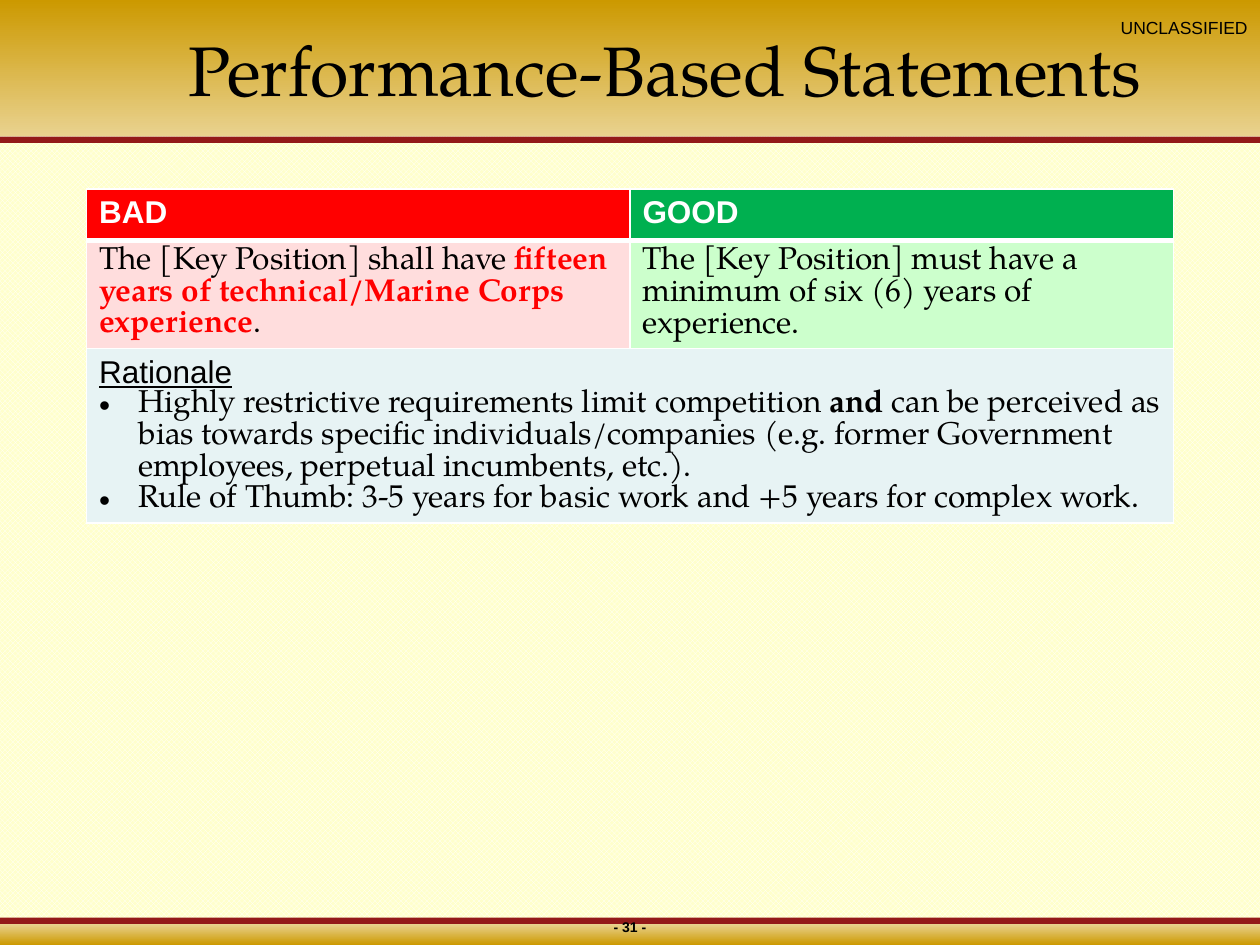
from lxml import etree
from pptx import Presentation
from pptx.dml.color import RGBColor
from pptx.enum.dml import MSO_PATTERN
from pptx.enum.shapes import MSO_SHAPE
from pptx.enum.text import MSO_ANCHOR, PP_ALIGN
from pptx.oxml.ns import qn
from pptx.util import Pt

RECT = MSO_SHAPE.RECTANGLE
TRELLIS = MSO_PATTERN.TRELLIS
TOP, MIDDLE = MSO_ANCHOR.TOP, MSO_ANCHOR.MIDDLE
LEFT, CENTER, RIGHT = PP_ALIGN.LEFT, PP_ALIGN.CENTER, PP_ALIGN.RIGHT

BLACK = RGBColor(0x00, 0x00, 0x00)
WHITE = RGBColor(0xFF, 0xFF, 0xFF)
CREAM = RGBColor(0xFF, 0xFF, 0xCC)
GOLD = RGBColor(0xCC, 0x99, 0x00)
SAND = RGBColor(0xE9, 0xD2, 0x8F)
MAROON = RGBColor(0x93, 0x19, 0x19)
RED = RGBColor(0xFF, 0x00, 0x00)
GREEN = RGBColor(0x00, 0xB0, 0x50)
PINK = RGBColor(0xFF, 0xDD, 0xDD)
MINT = RGBColor(0xCC, 0xFF, 0xCC)
ICE = RGBColor(0xE7, 0xF3, 0xF4)

SANS, SERIF = "Arial", "TeX Gyre Pagella"
WIDE, HIGH = 720, 540
INDENT = 22.5
PLAIN = {"name": SERIF, "size": Pt(18), "bold": False}
STRONG = {**PLAIN, "bold": True}
HEAD = {**STRONG, "name": SANS}
UNDER = {**PLAIN, "name": SANS, "underline": True}


def add_run(para, text, form, color=BLACK):
    """Add one run with its format values and colour."""
    run = para.add_run()
    run.text = text
    for key, value in form.items():
        setattr(run.font, key, value)
    run.font.color.rgb = color


def add_band(slide, box, colors):
    """Draw a borderless bar, plain or with a downward gradient."""
    bar = slide.shapes.add_shape(RECT, *map(Pt, box))
    bar.shadow.inherit = False
    bar.line.fill.background()
    if len(colors) == 1:
        bar.fill.solid()
        bar.fill.fore_color.rgb = colors[0]
        return
    bar.fill.gradient()
    bar.fill.gradient_angle = 270
    for stop, color in zip(bar.fill.gradient_stops, colors):
        stop.color.rgb = color


def add_label(slide, box, text, form, align):
    """Place a one-line label in its box."""
    frame = slide.shapes.add_textbox(*map(Pt, box)).text_frame
    values = {"word_wrap": True, "vertical_anchor": TOP,
              "margin_top": 0, "margin_bottom": 0}
    for key, value in values.items():
        setattr(frame, key, value)
    para = frame.paragraphs[0]
    para.alignment = align
    add_run(para, text, {"name": SANS, **form})


def set_title(slide, box, text):
    """Move the title to the front and format it."""
    title = slide.shapes.title
    slide.shapes._spTree.append(title._element)
    for key, value in zip(("left", "top", "width", "height"), box):
        setattr(title, key, Pt(value))
    frame = title.text_frame
    frame.word_wrap = True
    frame.vertical_anchor = MIDDLE
    para = frame.paragraphs[0]
    para.alignment = CENTER
    add_run(para, text, {"name": SERIF, "size": Pt(40)})


def set_edges(cell, top, bottom):
    """Draw white borders round a cell."""
    props = cell._tc.get_or_add_tcPr()
    for spot, (side, width) in enumerate(
            (("lnL", 1), ("lnR", 1), ("lnT", top), ("lnB", bottom))):
        line = etree.Element(qn(f"a:{side}"), w=str(Pt(width)))
        fill = etree.SubElement(line, qn("a:solidFill"))
        etree.SubElement(fill, qn("a:srgbClr"), val=str(WHITE))
        props.insert(spot, line)


def add_bullet(para):
    """Give a paragraph a hanging round bullet."""
    props = para._p.get_or_add_pPr()
    props.set("marL", str(Pt(INDENT)))
    props.set("indent", str(-Pt(INDENT)))
    etree.SubElement(props, qn("a:buFont"), typeface=SANS)
    etree.SubElement(props, qn("a:buChar"), char="•")


def fill_cell(cell, color, paras):
    """Fill a cell with colour and paragraphs of runs."""
    cell.fill.solid()
    cell.fill.fore_color.rgb = color
    frame = cell.text_frame
    for spot, runs in enumerate(paras):
        para = frame.add_paragraph() if spot else frame.paragraphs[0]
        para.alignment = LEFT
        if spot:
            add_bullet(para)
        for run in runs:
            add_run(para, *run)


def add_grid(slide, box, rows):
    """Build the comparison table with a merged last row."""
    grid = slide.shapes.add_table(len(rows), 2, *map(Pt, box)).table
    grid.horz_banding = False
    for col in grid.columns:
        col.width = Pt(box[2] / 2)
    grid.cell(len(rows) - 1, 0).merge(grid.cell(len(rows) - 1, 1))
    for at, row in enumerate(rows):
        grid.rows[at].height = Pt(29.5)
        for side, (color, paras) in enumerate(row):
            fill_cell(grid.cell(at, side), color, paras)
        for side in range(2):
            set_edges(grid.cell(at, side), 3 if at == 1 else 1,
                      3 if at == 0 else 1)


def add_frame(slide, box):
    """Draw the backdrop, bars and labels of the page."""
    left, top, width, height = box
    back = slide.background.fill
    back.patterned()
    back.pattern = TRELLIS
    back.fore_color.rgb = WHITE
    back.back_color.rgb = CREAM
    base = top + height
    add_band(slide, (left, top, width, 78), (GOLD, SAND))
    add_band(slide, (left, top + 78, width, 3.6), (MAROON,))
    add_band(slide, (left, base - 12, width, 12), (SAND, GOLD))
    add_band(slide, (left, base - 15.6, width, 3.6), (MAROON,))
    add_label(slide, (left, base - 15, width, 9), "- 31 -",
              {"size": Pt(8), "bold": True}, CENTER)
    add_label(slide, (left, top + 10, width, 12), "UNCLASSIFIED",
              {"size": Pt(10)}, RIGHT)


ROWS = [
    [(RED, [[("BAD", HEAD, WHITE)]]), (GREEN, [[("GOOD", HEAD, WHITE)]])],
    [(PINK, [[("The [Key Position] shall have ", PLAIN),
              ("fifteen years of technical/Marine Corps experience",
               STRONG, RED), (".", PLAIN)]]),
     (MINT, [[("The [Key Position] must have a minimum of six (6) "
               "years of experience.", PLAIN)]])],
    [(ICE, [[("Rationale", UNDER)],
            [("Highly restrictive requirements limit competition ", PLAIN),
             ("and", STRONG),
             (" can be perceived as bias towards specific "
              "individuals/companies (e.g. former Government employees, "
              "perpetual incumbents, etc.).", PLAIN)],
            [("Rule of Thumb: 3-5 years for basic work and +5 years "
              "for complex work.", PLAIN)]])],
]


def main():
    """Build and save the slide."""
    deck = Presentation()
    deck.slide_width, deck.slide_height = Pt(WIDE), Pt(HIGH)
    slide = deck.slides.add_slide(deck.slide_layouts[5])
    add_frame(slide, (0, 0, WIDE, HIGH))
    set_title(slide, (90, 6, 580, 66), "Performance-Based Statements")
    add_grid(slide, (49.5, 108, 621, 88.5), ROWS)
    deck.save("out.pptx")


if __name__ == "__main__":
    main()
